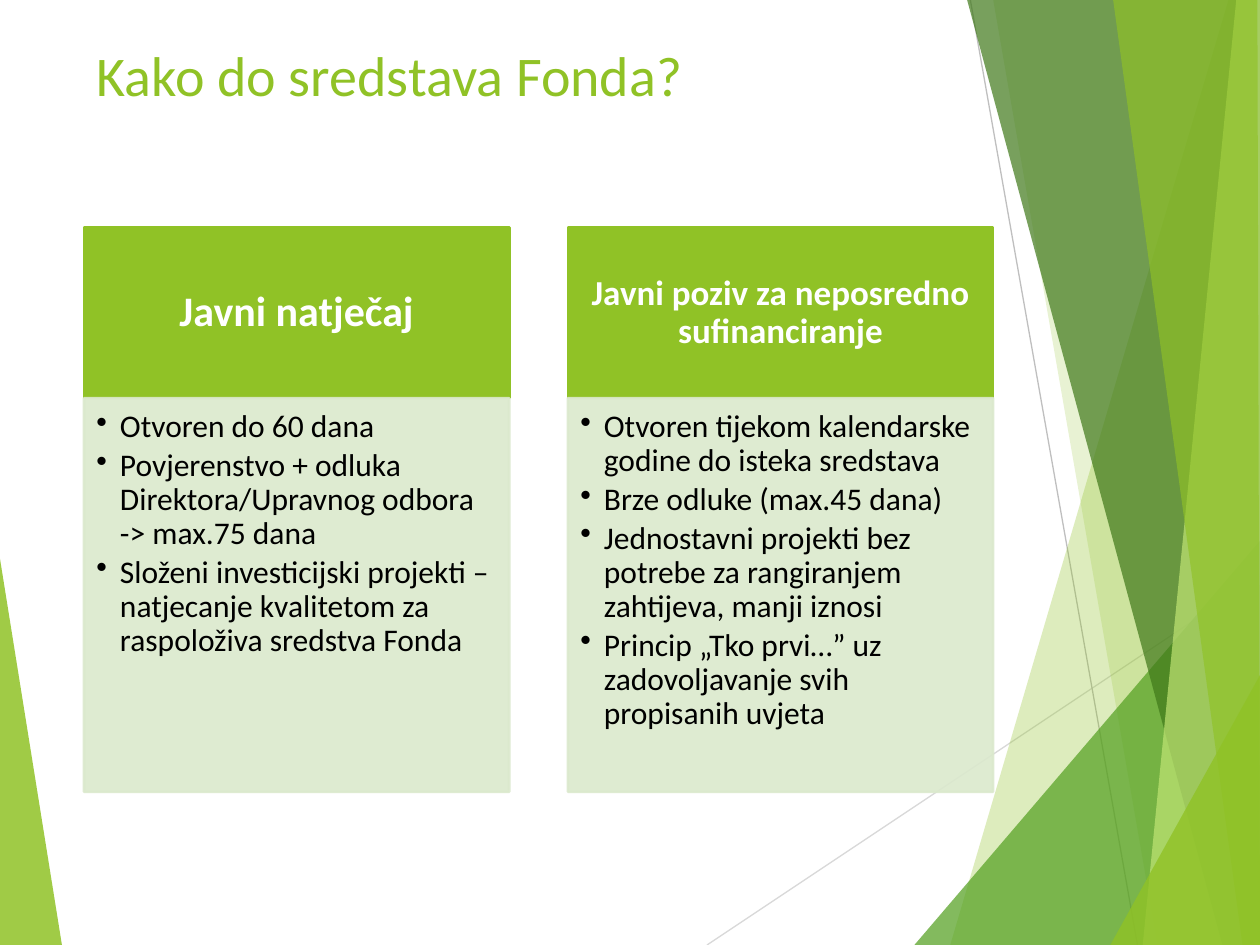
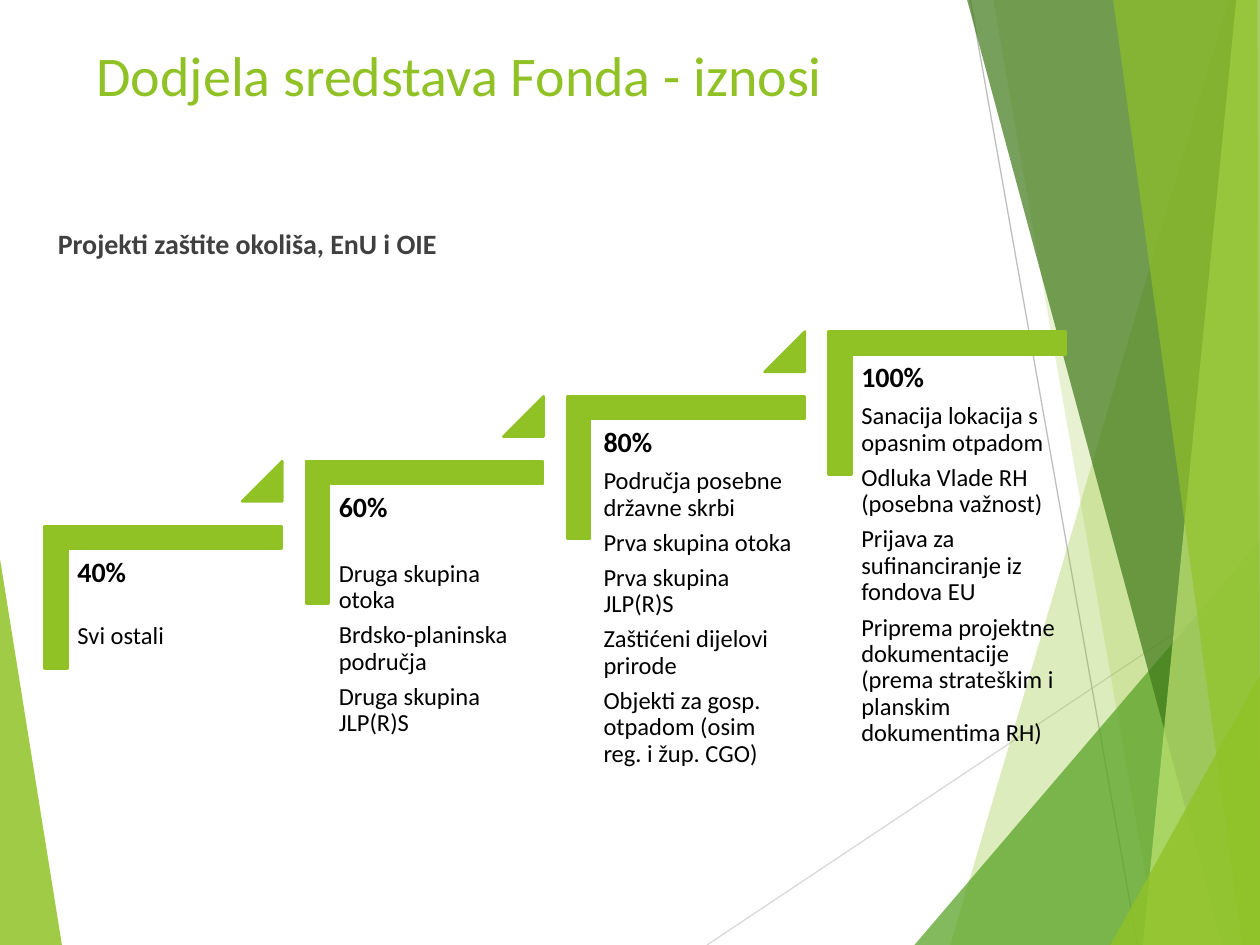
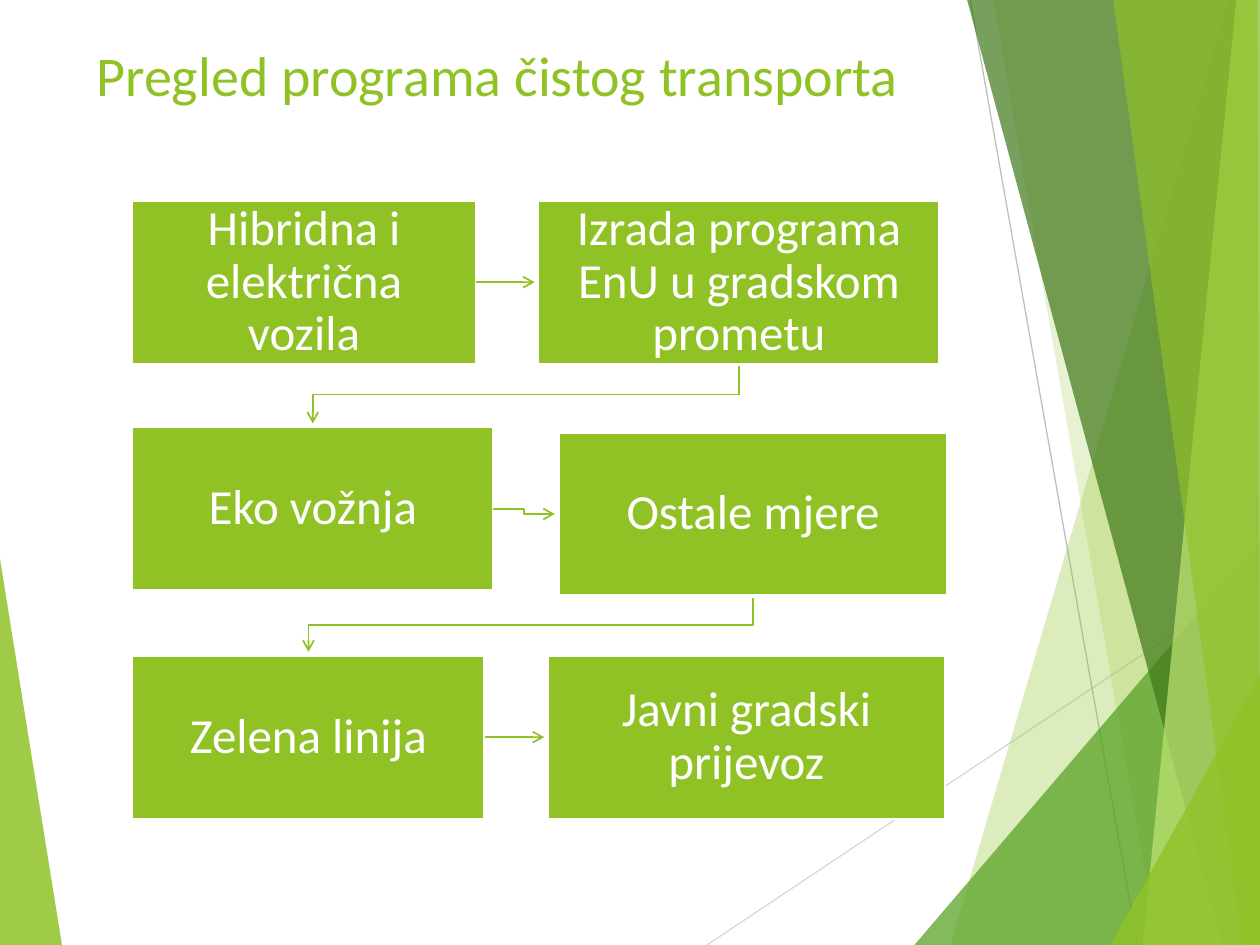
from lxml.etree import SubElement
from pptx import Presentation
from pptx.dml.color import RGBColor
from pptx.enum.shapes import MSO_CONNECTOR as Link, MSO_SHAPE as Preset
from pptx.enum.text import MSO_ANCHOR as Anchor, PP_ALIGN as Align
from pptx.oxml.ns import qn
from pptx.util import Pt

rgb = RGBColor.from_string
GREEN, PALE, WHITE, BLACK, GREY = "90C226", "DBE9CD", "FFFFFF", "000000", "404040"
FONT = "Calibri"


def paint(shape, fill, line=None, alpha=100):
    """Set fill, outline and opacity, and drop the theme shadow."""
    shape.shadow.inherit = False
    shape.fill.solid()
    shape.fill.fore_color.rgb = rgb(fill)
    if line:
        shape.line.color.rgb = rgb(line)
        shape.line.width = Pt(1.5)
    else:
        shape.line.fill.background()
    if alpha < 100:
        for colour in shape.element.spPr.iter(qn("a:srgbClr")):
            SubElement(colour, qn("a:alpha"), val=str(alpha * 1000))


def write(shape, lines, margins=(7.2, 3.6, 7.2, 3.6), anchor=Anchor.TOP,
          align=Align.LEFT, spacing=0.9):
    """Fill a shape with lines of (text, size, colour, bold, space after)."""
    frame = shape.text_frame
    frame.word_wrap = True
    frame.vertical_anchor = anchor
    (frame.margin_left, frame.margin_top,
     frame.margin_right, frame.margin_bottom) = map(Pt, margins)
    for i, (text, size, colour, bold, after) in enumerate(lines):
        paragraph = frame.add_paragraph() if i else frame.paragraphs[0]
        paragraph.alignment = align
        paragraph.line_spacing = spacing
        paragraph.space_after = Pt(after)
        run = paragraph.add_run()
        run.text = text
        run.font.name = FONT
        run.font.size = Pt(size)
        run.font.bold = bold
        run.font.color.rgb = rgb(colour)


prs = Presentation()
prs.slide_width, prs.slide_height = Pt(720), Pt(540)

# Backdrop shared by all slides: facets as (colour, opacity, corners)
left_facet = (GREEN, 85, [(-0.5, 316), (35.5, 540.5), (-0.5, 540)])
right_facets = [
    (GREEN, 30, [(702, 0), (543, 540), (721, 540.5), (720.5, 0)]),
    (GREEN, 20, [(567.5, -0.5), (661.5, 540), (720.5, 540), (720.5, -0.5)]),
    ("54A021", 72, [(522.5, 540), (720, 309), (720.5, 540)]),
    ("3F7819", 70, [(552.5, -0.5), (698.5, 540), (720.5, 540), (720.5, -0.5)]),
    ("C0E474", 70, [(706.5, -0.5), (653, 540), (720.5, 540), (720, -0.5)]),
    (GREEN, 65, [(636, -0.5), (710, 540), (720, 540), (718.5, -0.5)]),
    (GREEN, 80, [(634.5, 540), (720.5, 385), (720.5, 540)]),
]
hairlines = [("D9D9D9", 404, 540, 720.5, 329), ("BFBFBF", 554.5, 0, 650, 540)]

titles = ["Kako do sredstava Fonda?", "Dodjela sredstava Fonda - iznosi",
          "Pregled programa čistog transporta"]
slides = []
for title in titles:
    slide = prs.slides.add_slide(prs.slide_layouts[6])
    slides.append(slide)
    for colour, opacity, corners in [left_facet] + right_facets:
        (x, y), *others = corners
        outline = slide.shapes.build_freeform(Pt(x), Pt(y))
        outline.add_line_segments([(Pt(x), Pt(y)) for x, y in others], close=True)
        paint(outline.convert_to_shape(), colour, alpha=opacity)
        if corners is left_facet[2]:
            for grey, *ends in hairlines:
                hairline = slide.shapes.add_connector(Link.STRAIGHT, *map(Pt, ends))
                hairline.line.color.rgb = rgb(grey)
                hairline.line.width = Pt(0.75)
                SubElement(hairline.element.spPr, qn("a:effectLst"))
    heading = slide.shapes.add_textbox(Pt(48), Pt(19.5), Pt(519), Pt(75))
    write(heading, [(title, 32, GREEN, False, 0)], spacing=1)

calls_slide, amounts_slide, transport_slide = slides

# Slide 1: two kinds of call, side by side
calls = [
    ("Javni natječaj", 24, (13.7, 8, 13.7, 8), [
        "Otvoren do 60 dana",
        "Povjerenstvo + odluka Direktora/Upravnog odbora -> max.75 dana",
        "Složeni investicijski projekti – natjecanje kvalitetom za "
        "raspoloživa sredstva Fonda"]),
    ("Javni poziv za neposredno sufinanciranje", 20, (11.5, 6.5, 11.5, 6.5), [
        "Otvoren tijekom kalendarske godine do isteka sredstava",
        "Brze odluke (max.45 dana)",
        "Jednostavni projekti bez potrebe za rangiranjem zahtijeva, manji iznosi",
        "Princip „Tko prvi…” uz zadovoljavanje svih propisanih uvjeta"]),
]
for column, (call, size, margins, features) in enumerate(calls):
    left = 48 + column * 276.5
    header = calls_slide.shapes.add_shape(
        Preset.RECTANGLE, Pt(left), Pt(130), Pt(243), Pt(97.5))
    paint(header, GREEN, GREEN)
    write(header, [(call, size, WHITE, True, 0)], margins, Anchor.MIDDLE, Align.CENTER)
    details = calls_slide.shapes.add_shape(
        Preset.RECTANGLE, Pt(left), Pt(227.5), Pt(243), Pt(225))
    paint(details, PALE, PALE, alpha=90)
    write(details, [(feature, 18, BLACK, False, 2.7) for feature in features],
          (7.2, 7.2, 9.6, 11))
    for paragraph in details.text_frame.paragraphs:
        properties = paragraph._p.get_or_add_pPr()
        properties.set("marL", str(Pt(13.5)))
        properties.set("indent", str(Pt(-13.5)))
        SubElement(properties, qn("a:buChar"), char="•")

# Slide 2: rising steps as (share, space below it, text shift, cases)
steps = [
    ("40%", 20, 0, ["Svi ostali"]),
    ("60%", 21.5, 0, ["Druga skupina otoka", "Brdsko-planinska područja",
                      "Druga skupina JLP(R)S"]),
    ("80%", 5.6, 2, ["Područja posebne državne skrbi", "Prva skupina otoka",
                     "Prva skupina JLP(R)S", "Zaštićeni dijelovi prirode",
                     "Objekti za gosp. otpadom (osim reg. i žup. CGO)"]),
    ("100%", 5.6, 0, ["Sanacija lokacija s opasnim otpadom",
                      "Odluka Vlade RH (posebna važnost)",
                      "Prijava za sufinanciranje iz fondova EU",
                      "Priprema projektne dokumentacije (prema strateškim i "
                      "planskim dokumentima RH)"]),
]
for number, (share, gap, shift, cases) in enumerate(steps):
    left, top = 52.5 + number * 149.3, 273.5 - number * 37
    corner = amounts_slide.shapes.add_shape(
        Preset.CORNER, Pt(left), Pt(top), Pt(81.5), Pt(135.5))
    corner.rotation = 90
    corner.adjustments[0] = corner.adjustments[1] = 0.16
    paint(corner, GREEN, GREEN)
    step_text = amounts_slide.shapes.add_textbox(
        Pt(left - 13.2 + shift), Pt(top + 40.3), Pt(121.7 - 2 * shift), Pt(106.5))
    write(step_text, [(share, 16, BLACK, True, gap)]
          + [(case, 14, BLACK, False, 4.9) for case in cases], (5, 5, 5, 5))
    if number < len(steps) - 1:
        rise = amounts_slide.shapes.add_shape(
            Preset.ISOSCELES_TRIANGLE, Pt(left + 85.8), Pt(top - 10), Pt(23), Pt(23))
        rise.adjustments[0] = 1
        paint(rise, GREEN, GREEN)

scope = amounts_slide.shapes.add_textbox(Pt(26), Pt(126), Pt(360), Pt(26.5))
write(scope, [("Projekti zaštite okoliša, EnU i OIE", 16, GREY, True, 0)], spacing=1)

# Slide 3: programmes as (name, left, top, width)
programmes = [
    ("Hibridna i električna vozila", 75.5, 114.5, 196.5),
    ("Izrada programa EnU u gradskom prometu", 307.5, 114.5, 229.5),
    ("Eko vožnja", 75.5, 244, 206.5),
    ("Ostale mjere", 319, 247, 222.5),
    ("Zelena linija", 75.5, 374.5, 201.5),
    ("Javni gradski prijevoz", 313, 374.5, 227),
]
HEIGHT, CLEARANCE = 93.5, 2
boxes = []
for programme, left, top, width in programmes:
    box = transport_slide.shapes.add_shape(
        Preset.RECTANGLE, Pt(left), Pt(top), Pt(width), Pt(HEIGHT))
    paint(box, GREEN, WHITE)
    write(box, [(programme, 28, WHITE, False, 0)], (15.5, 15.5, 15.5, 15.5),
          Anchor.MIDDLE, Align.CENTER)
    boxes.append(box)

# Arrows from each programme to the next
for box, (_, left, top, width), (_, next_left, next_top, next_width) in zip(
        boxes, programmes, programmes[1:]):
    if next_left > left:
        kind = Link.STRAIGHT if top == next_top else Link.ELBOW
        arrow = transport_slide.shapes.add_connector(
            kind, Pt(left + width), Pt(top + HEIGHT / 2),
            Pt(next_left - CLEARANCE), Pt(next_top + HEIGHT / 2))
        arrow.begin_connect(box, 3)
    else:
        start_x, end_x = Pt(left + width / 2), Pt(next_left + next_width / 2)
        start_y, end_y = Pt(top + HEIGHT + 1), Pt(next_top - CLEARANCE)
        turn_y = (start_y + end_y) // 2
        bend = transport_slide.shapes.build_freeform(start_x, start_y)
        bend.add_line_segments(
            [(start_x, turn_y), (end_x, turn_y), (end_x, end_y)], close=False)
        arrow = bend.convert_to_shape()
        arrow.fill.background()
    arrow.line.color.rgb = rgb(GREEN)
    arrow.line.width = Pt(1)
    SubElement(arrow.element.spPr.find(qn("a:ln")), qn("a:tailEnd"), type="arrow")
    SubElement(arrow.element.spPr, qn("a:effectLst"))

prs.save("out.pptx")
